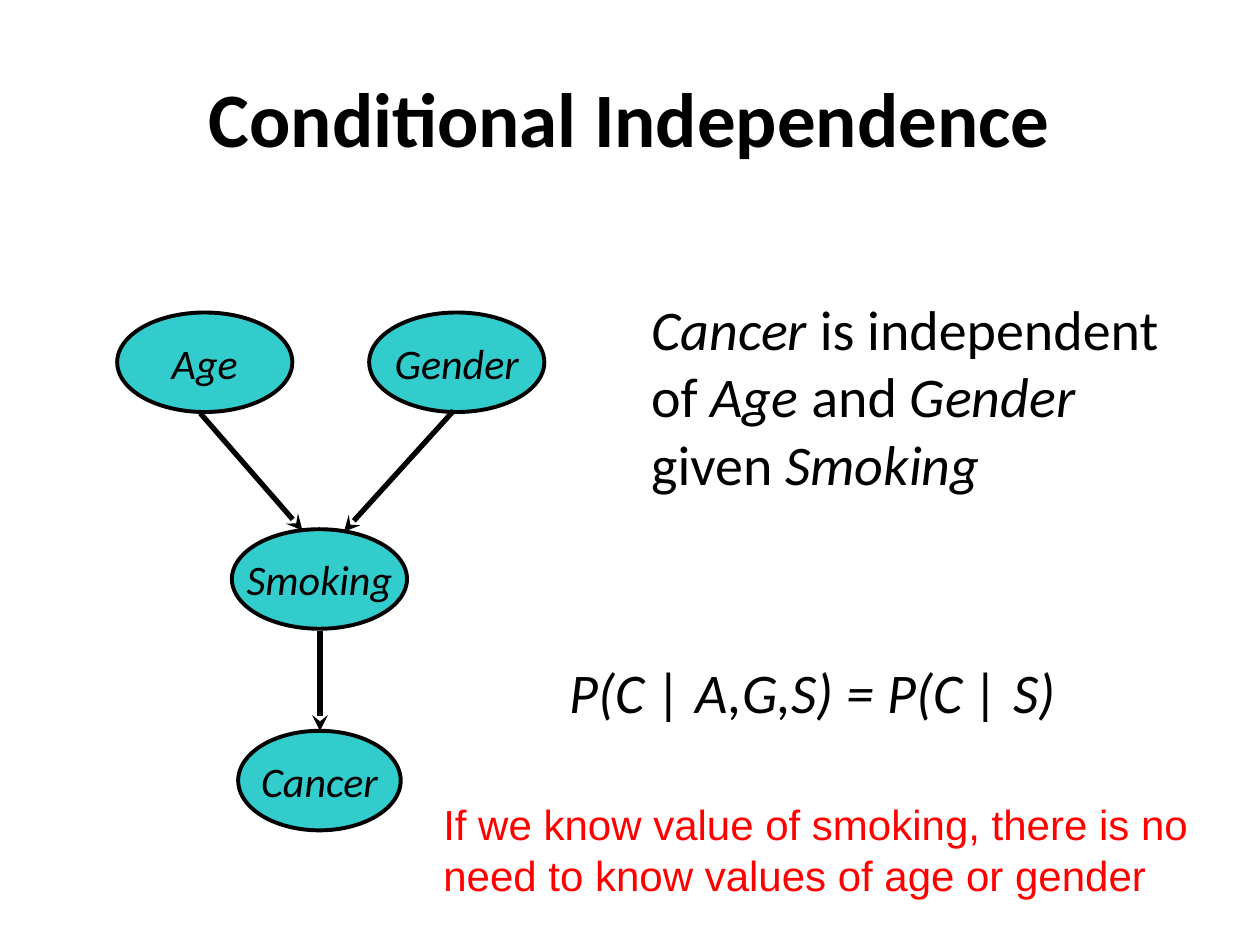
import pptx
import pptx.util
import pptx.dml.color
import pptx.enum.shapes
import pptx.enum.text
import pptx.oxml
import pptx.oxml.ns

Inches, Pt = pptx.util.Inches, pptx.util.Pt
ALIGN = pptx.enum.text.PP_ALIGN
MIDDLE = pptx.enum.text.MSO_ANCHOR.MIDDLE
SPACE = pptx.oxml.ns.nsdecls("a")


def color(value):
    return pptx.dml.color.RGBColor.from_string(value)


def style(font, size, name="Calibri", tone="000000"):
    font.size, font.name = Pt(size), name
    font.color.rgb = color(tone)


deck = pptx.Presentation()
deck.slide_width, deck.slide_height = Inches(10), Inches(7.5)
slide = deck.slides.add_slide(deck.slide_layouts[5])
shapes = slide.shapes

title = shapes.title
title.left, title.top = Inches(0.5), Inches(0.3)
title.width, title.height = Inches(9), Inches(1.25)
title.text_frame.text = "Conditional Independence"
title.text_frame.vertical_anchor = MIDDLE
para = title.text_frame.paragraphs[0]
para.alignment = ALIGN.CENTER
para.font.bold = True
style(para.font, 44)

# Network nodes: label, left, top, width
nodes = [
    ("Smoking", 1.84, 4.2, 1.39),
    ("Gender", 2.93, 2.48, 1.39),
    ("Age", 0.93, 2.48, 1.39),
    ("Cancer", 1.89, 5.8, 1.29),
]
for label, left, top, width in nodes:
    node = shapes.add_shape(
        pptx.enum.shapes.MSO_SHAPE.OVAL,
        Inches(left), Inches(top), Inches(width), Inches(0.79))
    node.shadow.inherit = False
    node.fill.solid()
    node.fill.fore_color.rgb = color("33CCCC")
    node.line.color.rgb = color("000000")
    node.line.width = Pt(2.25)
    frame = node.text_frame
    frame.text = label
    frame.word_wrap = False
    frame.vertical_anchor = MIDDLE
    para = frame.paragraphs[0]
    para.alignment = ALIGN.CENTER
    para.font.italic = True
    style(para.font, 24)

# Arrows: start x, start y, end x, end y
arrows = [
    (3.6, 3.26, 2.73, 4.22),
    (1.59, 3.28, 2.4, 4.21),
    (2.54, 5.01, 2.54, 5.8),
]
for ends in arrows:
    arrow = shapes.add_connector(
        pptx.enum.shapes.MSO_CONNECTOR.STRAIGHT, *map(Inches, ends))
    arrow.line.color.rgb = color("000000")
    arrow.line.width = Pt(3)
    props = arrow._element.spPr
    props.get_or_add_ln().append(
        pptx.oxml.parse_xml(f'<a:tailEnd {SPACE} type="stealth"/>'))
    props.append(pptx.oxml.parse_xml(f"<a:effectLst {SPACE}/>"))

# Notes: box, wrap, size, font, colour, runs as (text, italic)
notes = [
    ((5.07, 2.29, 4.39, 1.72), True, 32, "Calibri", "000000",
     [("Cancer", True), (" is independent of ", False), ("Age", True),
      (" and ", False), ("Gender", True), (" given ", False),
      ("Smoking", True)]),
    ((4.42, 5.17, 4.12, 0.64), False, 32, "Calibri", "000000",
     [("P(C | A,G,S) = P(C | S)", True)]),
    ((3.42, 6.29, 6.29, 0.91), True, 24, "Arial", "FF0000",
     [("If we know value of smoking, there is no need to know "
       "values of age or gender", False)]),
]
for place, wrap, size, face, tone, runs in notes:
    frame = shapes.add_textbox(*map(Inches, place)).text_frame
    frame.word_wrap = wrap
    frame.auto_size = pptx.enum.text.MSO_AUTO_SIZE.SHAPE_TO_FIT_TEXT
    para = frame.paragraphs[0]
    style(para.font, size, face, tone)
    for text, slant in runs:
        run = para.add_run()
        run.text = text
        run.font.italic = slant

deck.save("out.pptx")
